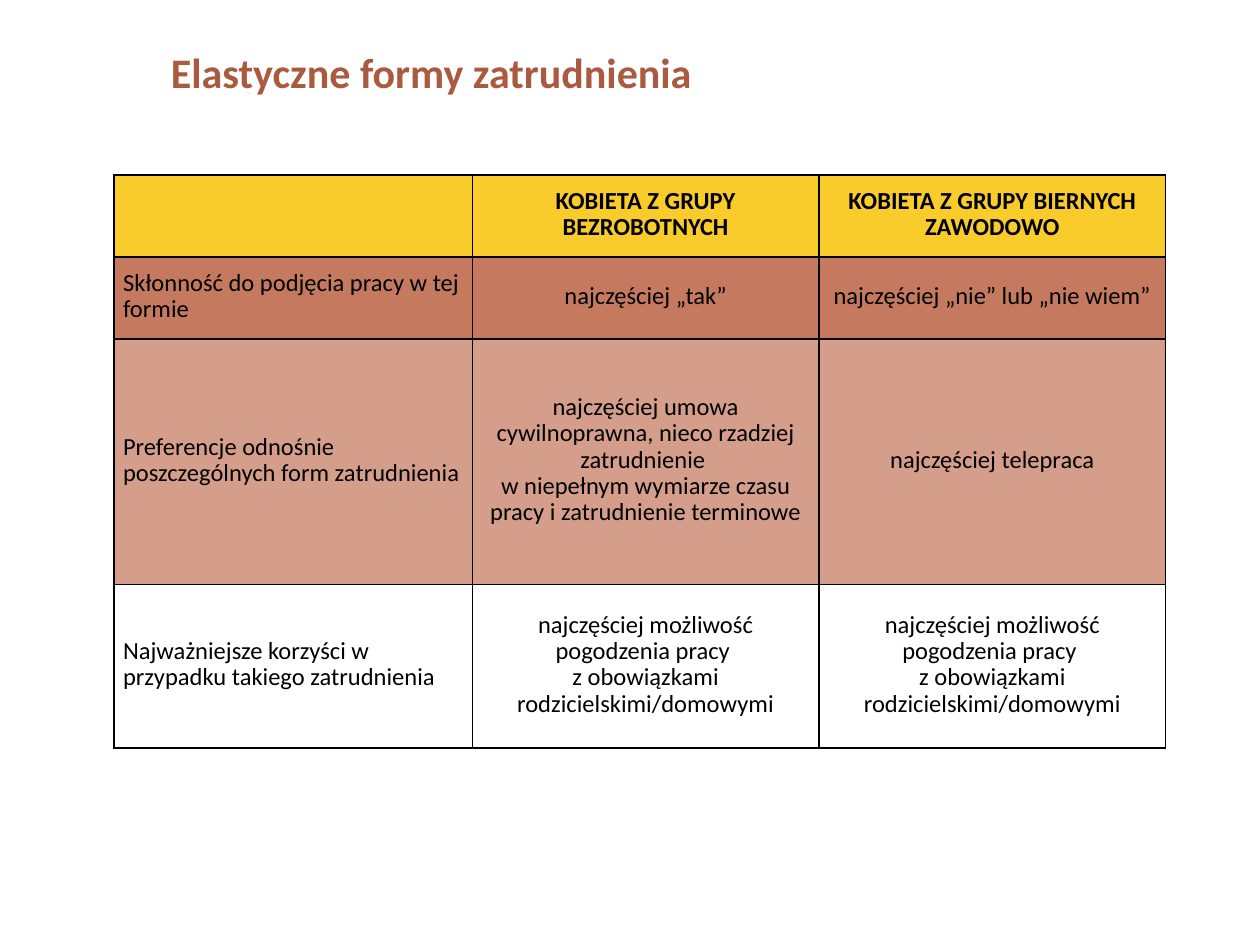
from dataclasses import dataclass

from lxml.etree import SubElement
from pptx import Presentation
from pptx.dml.color import RGBColor
from pptx.enum.text import MSO_ANCHOR, PP_ALIGN
from pptx.oxml.ns import qn
from pptx.table import _Cell
from pptx.text.text import TextFrame
from pptx.util import Cm, Pt


@dataclass(frozen=True)
class Theme:
    font: str = "Calibri"
    title_size: int = 24
    table_size: int = 14
    line_spacing: int = 15
    title: str = "AA5A3E"
    text: str = "000000"
    border: str = "000000"
    header: str = "F9CC2B"
    dark_row: str = "C57A5F"
    light_row: str = "D59E8B"


@dataclass(frozen=True)
class TableRow:
    height: float
    texts: tuple[str, str, str]
    fill: str | None = None
    bold: bool = False


THEME = Theme()
COLUMN_WIDTHS = (7.22, 6.99, 6.99)
BENEFIT = "najczęściej możliwość pogodzenia pracy \vz obowiązkami rodzicielskimi/domowymi"
ROWS = (
    TableRow(
        1.65,
        ("", "KOBIETA Z GRUPY BEZROBOTNYCH", "KOBIETA Z GRUPY BIERNYCH ZAWODOWO"),
        THEME.header,
        bold=True,
    ),
    TableRow(
        1.65,
        (
            "Skłonność do podjęcia pracy w tej formie",
            "najczęściej „tak”",
            "najczęściej „nie” lub „nie wiem”",
        ),
        THEME.dark_row,
    ),
    TableRow(
        4.95,
        (
            "Preferencje odnośnie poszczególnych form zatrudnienia",
            "najczęściej umowa cywilnoprawna, nieco rzadziej zatrudnienie "
            "\vw niepełnym wymiarze czasu pracy i zatrudnienie terminowe",
            "najczęściej telepraca",
        ),
        THEME.light_row,
    ),
    TableRow(
        3.3,
        ("Najważniejsze korzyści w przypadku takiego zatrudnienia", BENEFIT, BENEFIT),
    ),
)


def write_text(
    frame: TextFrame,
    text: str,
    *,
    size: int,
    color: str,
    bold: bool = False,
    alignment: PP_ALIGN = PP_ALIGN.CENTER,
    line_spacing: int | None = None,
) -> None:
    paragraph = frame.paragraphs[0]
    paragraph.text = text
    paragraph.alignment = alignment
    if line_spacing:
        paragraph.line_spacing = Pt(line_spacing)
    for run in paragraph.runs:
        run.font.name = THEME.font
        run.font.size = Pt(size)
        run.font.bold = bold
        run.font.color.rgb = RGBColor.from_string(color)


def draw_borders(cell: _Cell) -> None:
    properties = cell._tc.get_or_add_tcPr()
    for side in ("lnL", "lnR", "lnT", "lnB"):
        line = SubElement(properties, qn(f"a:{side}"), w=str(Pt(1)))
        fill = SubElement(line, qn("a:solidFill"))
        SubElement(fill, qn("a:srgbClr"), val=THEME.border)


def format_cell(cell: _Cell, fill: str | None) -> None:
    draw_borders(cell)
    if fill:
        cell.fill.solid()
        cell.fill.fore_color.rgb = RGBColor.from_string(fill)
    else:
        cell.fill.background()
    cell.vertical_anchor = MSO_ANCHOR.MIDDLE
    cell.margin_left = cell.margin_right = Cm(0.18)
    cell.margin_top = cell.margin_bottom = 0


def main() -> None:
    presentation = Presentation()
    presentation.slide_width, presentation.slide_height = Cm(25.4), Cm(19.05)
    slide = presentation.slides.add_slide(presentation.slide_layouts[5])

    title = slide.shapes.title
    title.left, title.top, title.width, title.height = Cm(0.3), Cm(0.33), Cm(16.79), Cm(2.21)
    title.text_frame.vertical_anchor = MSO_ANCHOR.MIDDLE
    write_text(
        title.text_frame,
        "Elastyczne formy zatrudnienia",
        size=THEME.title_size,
        color=THEME.title,
        bold=True,
    )

    table = slide.shapes.add_table(
        len(ROWS),
        len(COLUMN_WIDTHS),
        Cm(2.3),
        Cm(3.53),
        Cm(sum(COLUMN_WIDTHS)),
        Cm(sum(row.height for row in ROWS)),
    ).table
    table.first_row = table.horz_banding = False
    for column, width in zip(table.columns, COLUMN_WIDTHS):
        column.width = Cm(width)
    for row_index, row in enumerate(ROWS):
        table.rows[row_index].height = Cm(row.height)
        for column_index, text in enumerate(row.texts):
            cell = table.cell(row_index, column_index)
            format_cell(cell, row.fill)
            write_text(
                cell.text_frame,
                text,
                size=THEME.table_size,
                color=THEME.text,
                bold=row.bold,
                alignment=PP_ALIGN.CENTER if column_index else PP_ALIGN.LEFT,
                line_spacing=THEME.line_spacing,
            )

    presentation.save("out.pptx")


if __name__ == "__main__":
    main()
